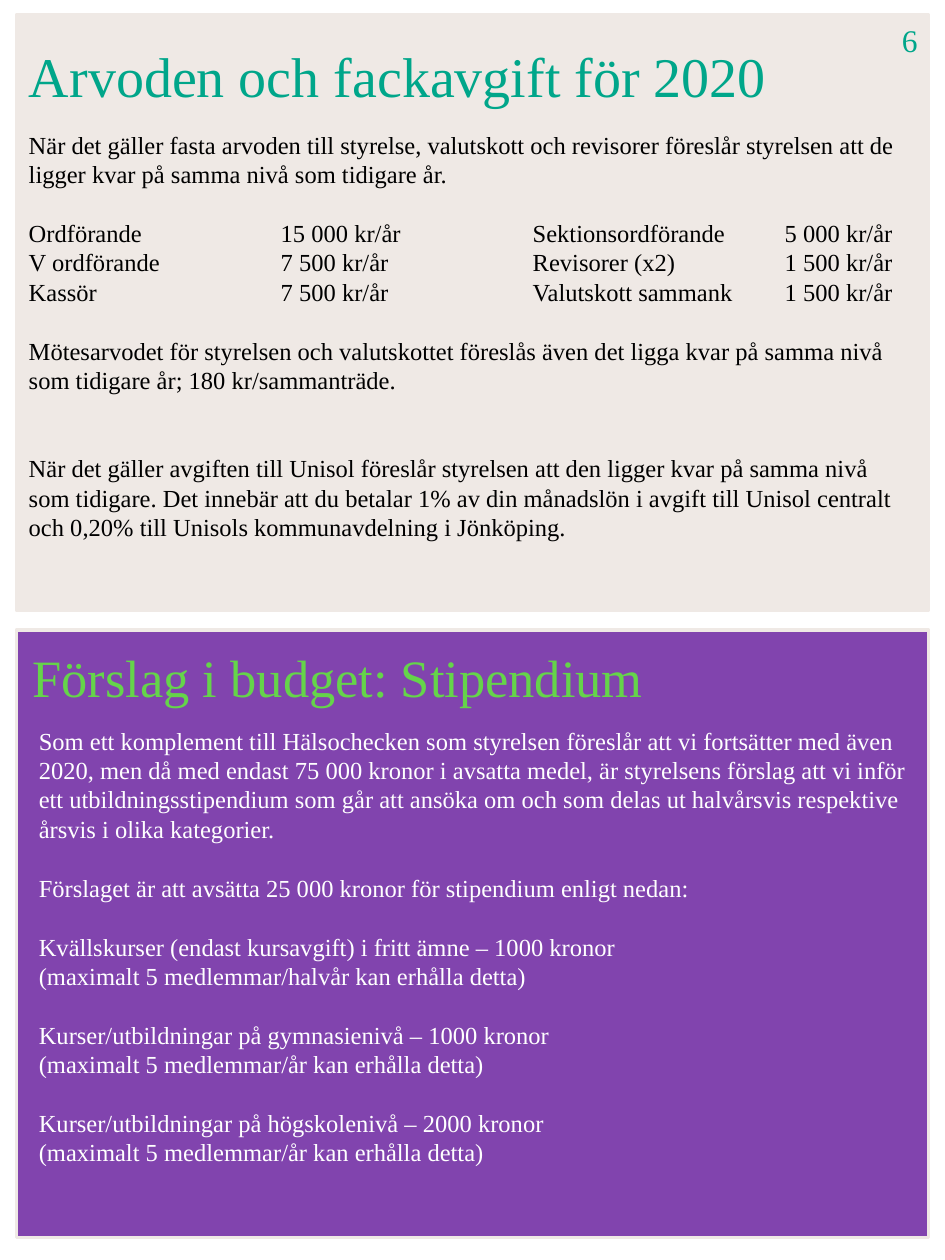
from pptx import Presentation
from pptx.dml.color import RGBColor
from pptx.enum.shapes import MSO_SHAPE as SHAPE
from pptx.enum.text import MSO_ANCHOR as ANCHOR, MSO_AUTO_SIZE as AUTO, PP_ALIGN as ALIGN
from pptx.util import Inches, Pt
from lxml import etree

SAND = RGBColor(0xEF, 0xE9, 0xE5)
PURPLE = RGBColor(0x81, 0x44, 0xAE)
TEAL = RGBColor(0x00, 0xA6, 0x8A)
GREEN = RGBColor(0x65, 0xD4, 0x4A)
BLACK = RGBColor(0x00, 0x00, 0x00)
WHITE = RGBColor(0xFF, 0xFF, 0xFF)
NS = "{http://schemas.openxmlformats.org/drawingml/2006/main}"
LEADING = 1.2

FEES = [
    (0, "När det gäller fasta arvoden till styrelse, valutskott och revisorer föreslår "
        "styrelsen att de ligger kvar på samma nivå som tidigare år."),
    (1, "Ordförande\t15 000 kr/år\tSektionsordförande\t5 000 kr/år"),
    (0, "V ordförande\t7 500 kr/år\tRevisorer (x2)\t1 500 kr/år"),
    (0, "Kassör\t7 500 kr/år\tValutskott sammank\t1 500 kr/år"),
    (1, "Mötesarvodet för styrelsen och valutskottet föreslås även det ligga kvar på "
        "samma nivå som tidigare år; 180 kr/sammanträde."),
    (2, "När det gäller avgiften till Unisol föreslår styrelsen att den ligger kvar på "
        "samma nivå som tidigare. Det innebär att du betalar 1% av din månadslön i avgift "
        "till Unisol centralt och 0,20% till Unisols kommunavdelning i Jönköping."),
]
GRANTS = [
    (0, "Som ett komplement till Hälsochecken som styrelsen föreslår att vi fortsätter med "
        "även 2020, men då med endast 75 000 kronor i avsatta medel, är styrelsens förslag "
        "att vi inför ett utbildningsstipendium som går att ansöka om och som delas ut "
        "halvårsvis respektive årsvis i olika kategorier."),
    (1, "Förslaget är att avsätta 25 000 kronor för stipendium enligt nedan:"),
]
COURSES = [
    ("Kvällskurser (endast kursavgift) i fritt ämne – 1000 kronor", "halvår"),
    ("Kurser/utbildningar på gymnasienivå – 1000 kronor", "år"),
    ("Kurser/utbildningar på högskolenivå – 2000 kronor", "år"),
]
for course, period in COURSES:
    GRANTS += [(1, course), (0, f"(maximalt 5 medlemmar/{period} kan erhålla detta)")]


def write(tf, paragraphs, size=14, color=BLACK, font="Times New Roman"):
    """Fill a text frame with (blank lines before, text) pairs."""
    tf.word_wrap = True
    tf.auto_size = AUTO.SHAPE_TO_FIT_TEXT
    tf.vertical_anchor = ANCHOR.TOP
    for i, (gap, text) in enumerate(paragraphs):
        p = tf.add_paragraph() if i else tf.paragraphs[0]
        p.alignment = ALIGN.LEFT
        p.line_spacing = Pt(size * LEADING)
        p.space_before = Pt(gap * size * LEADING)
        if "\t" in text:
            tabs = etree.SubElement(p._p.get_or_add_pPr(), NS + "tabLst")
            for stop in (2, 4, 6):
                etree.SubElement(tabs, NS + "tab", pos=str(Inches(stop)), algn="l")
        r = p.add_run()
        r.text = text
        r.font.name = font
        r.font.size = Pt(size)
        r.font.color.rgb = color


class Page:
    """Holds the current slide and draws its panels and texts."""

    def __init__(self, s):
        self.s = s

    def panel(self, x, y, w, h, fill):
        """Draw a filled panel with a sand border."""
        sp = self.s.shapes.add_shape(SHAPE.RECTANGLE, Inches(x), Inches(y), Inches(w), Inches(h))
        sp.shadow.inherit = False
        sp.fill.solid()
        sp.fill.fore_color.rgb = fill
        sp.line.color.rgb = SAND
        sp.line.width = Pt(2)
        return sp

    def title(self, x, y, w, h, text, behind, **fmt):
        """Place the title placeholder just above a panel."""
        sp = self.s.shapes.title
        sp.left, sp.top, sp.width, sp.height = map(Inches, (x, y, w, h))
        write(sp.text_frame, [(0, text)], **fmt)
        behind.element.addnext(sp.element)

    def text(self, x, y, w, h, paragraphs, **fmt):
        """Add a text box."""
        sp = self.s.shapes.add_textbox(Inches(x), Inches(y), Inches(w), Inches(h))
        write(sp.text_frame, paragraphs, **fmt)


def main():
    """Build the slide and save it."""
    prs = Presentation()
    prs.slide_width, prs.slide_height = Inches(7.5), Inches(10)
    page = Page(prs.slides.add_slide(prs.slide_layouts[5]))

    fees = page.panel(0.13, 0.12, 7.24, 4.72, SAND)
    page.title(0.13, 0.28, 6.61, 0.64, "Arvoden och fackavgift för 2020", fees, size=32, color=TEAL)
    page.panel(0.13, 5, 7.24, 4.82, PURPLE)
    page.text(0.13, 0.98, 7.17, 3.4, FEES)
    page.text(7.06, 0.12, 0.31, 0.4, [(0, "6")], size=18, color=TEAL)
    page.text(0.16, 5.07, 7.13, 0.61, [(0, "Förslag i budget: Stipendium")], size=30, color=GREEN)
    page.text(0.21, 5.71, 7.17, 3.64, GRANTS, color=WHITE)

    prs.save("out.pptx")


if __name__ == "__main__":
    main()
